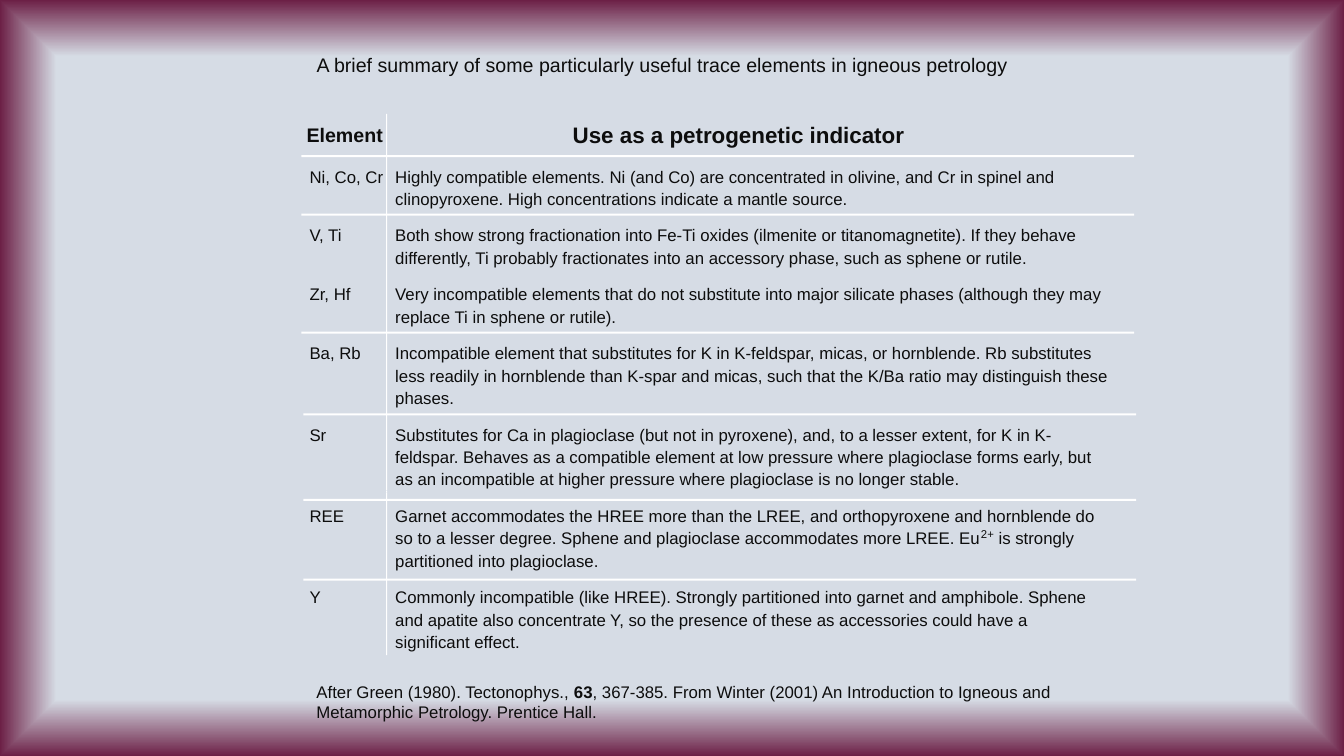
from pptx import Presentation
from pptx.dml.color import RGBColor
from pptx.enum.shapes import MSO_SHAPE
from pptx.enum.text import MSO_ANCHOR, PP_ALIGN
from pptx.oxml import parse_xml
from pptx.oxml.ns import nsdecls, qn
from pptx.util import Inches, Pt

# Content
COLORS = {"text": "0D0D0D", "rule": "FFFFFF", "center": "D6DCE5", "edge": "6C2046"}
FONT = "Arial"
TITLE = "A brief summary of some particularly useful trace elements in igneous petrology"
HEADER = [("Element", 14), ("Use as a petrogenetic indicator", 16)]
SUPER = "2+"
# element, lines of text, bottom edge of the row
ELEMENTS = [
    ("Ni, Co, Cr", [
        "Highly compatible elements. Ni (and Co) are concentrated in olivine, and Cr in spinel and",
        "clinopyroxene. High concentrations indicate a mantle source."], 2.13),
    ("V, Ti", [
        "Both show strong fractionation into Fe-Ti oxides (ilmenite or titanomagnetite). If they behave",
        "differently, Ti probably fractionates into an accessory phase, such as sphene or rutile."], 2.71),
    ("Zr, Hf", [
        "Very incompatible elements that do not substitute into major silicate phases (although they may",
        "replace Ti in sphene or rutile)."], 3.3),
    ("Ba, Rb", [
        "Incompatible element that substitutes for K in K-feldspar, micas, or hornblende. Rb substitutes",
        "less readily in hornblende than K-spar and micas, such that the K/Ba ratio may distinguish these",
        "phases."], 4.11),
    ("Sr", [
        "Substitutes for Ca in plagioclase (but not in pyroxene), and, to a lesser extent, for K in K-",
        "feldspar. Behaves as a compatible element at low pressure where plagioclase forms early, but",
        "as an incompatible at higher pressure where plagioclase is no longer stable."], 4.96),
    ("REE", [
        "Garnet accommodates the HREE more than the LREE, and orthopyroxene and hornblende do",
        "so to a lesser degree. Sphene and plagioclase accommodates more LREE. Eu2+ is strongly",
        "partitioned into plagioclase."], 5.75),
    ("Y", [
        "Commonly incompatible (like HREE). Strongly partitioned into garnet and amphibole. Sphene",
        "and apatite also concentrate Y, so the presence of these as accessories could have a",
        "significant effect."], 6.5),
]
SOURCE = [("After Green (1980). Tectonophys., ", False), ("63", True),
          (", 367-385. From Winter (2001) An Introduction to Igneous and "
           "Metamorphic Petrology. Prentice Hall.", False)]

# Grid, in inches
LEFT, TOP, HEADER_BOTTOM = 2.99, 1.13, 1.55
COLUMNS = [0.84, 7.42]
LINE = 16 / 72          # line pitch of the body text
ROW_GAP = 0.14          # extra space between two entries
FIRST_TEXT = 1.63       # top of the first body line
RULES = [(2.99, 1.54), (2.99, 2.12), (2.99, 3.29),
         (3.01, 4.1), (3.01, 4.95), (3.01, 5.74)]      # left, top
RULE_SIZE = (8.26, 0.02)
DIVIDER = (3.83, 0.01)  # left, width
DIVIDER_BODY = 1.52     # top of the divider's first body piece
JOINT = 0.02            # short piece between two divider pieces


def add_run(p, text, size, bold=False, raised=False):
    r = p.add_run()
    r.text = text
    r.font.name, r.font.size, r.font.bold = FONT, Pt(size), bold
    r.font.color.rgb = RGBColor.from_string(COLORS["text"])
    if raised:
        r.font._element.set("baseline", "30000")


def add_text(s, box, runs, size, margins=(0, 0), wrap=True):
    tf = s.shapes.add_textbox(*map(Inches, box)).text_frame
    tf.word_wrap = wrap
    tf.margin_left = tf.margin_right = Inches(margins[0])
    tf.margin_top = tf.margin_bottom = Inches(margins[1])
    for text, bold in runs:
        add_run(tf.paragraphs[0], text, size, bold)


def add_bar(s, *box):
    sp = s.shapes.add_shape(MSO_SHAPE.RECTANGLE, *map(Inches, box))
    sp.shadow.inherit = False
    sp.fill.solid()
    sp.fill.fore_color.rgb = RGBColor.from_string(COLORS["rule"])
    sp.line.fill.background()


def clear_cell(cell):
    """Remove the fill and all four borders."""
    cell.fill.background()
    tc_pr = cell._tc.get_or_add_tcPr()
    for i, side in enumerate("LRTB"):
        tc_pr.insert(i, parse_xml(f'<a:ln{side} {nsdecls("a")} w="0"><a:noFill/></a:ln{side}>'))


def set_margins(cell, left, top=0, right=0):
    cell.margin_left, cell.margin_top = Inches(left), Inches(top)
    cell.margin_right, cell.margin_bottom = Inches(right), 0


def add_background(s):
    fill = s.background.fill
    fill.gradient()
    for stop, name, position in zip(fill.gradient_stops, ("center", "edge"), (0.85, 1)):
        stop.color.rgb = RGBColor.from_string(COLORS[name])
        stop.position = position
    grad = next(s.element.iter(qn("a:gradFill")))
    edge = list(grad.iter(qn("a:srgbClr")))[1]
    edge.append(parse_xml(f'<a:alpha {nsdecls("a")} val="61000"/>'))
    grad.replace(grad.find(qn("a:lin")), parse_xml(
        f'<a:path {nsdecls("a")} path="shape">'
        '<a:fillToRect l="50000" t="50000" r="50000" b="50000"/></a:path>'))


def add_elements_table(s):
    edges = [TOP, HEADER_BOTTOM] + [row[2] for row in ELEMENTS]
    frame = s.shapes.add_table(len(edges) - 1, 2, Inches(LEFT), Inches(TOP),
                               Inches(sum(COLUMNS)), Inches(edges[-1] - TOP))
    table = frame.table
    table.first_row = table.horz_banding = False
    next(table._tbl.iter(qn("a:tableStyleId"))).text = "{2D5ABB26-0587-4C30-8999-92F81FD0307C}"
    for column, width in zip(table.columns, COLUMNS):
        column.width = Inches(width)
    for i, row in enumerate(table.rows):
        row.height = Inches(edges[i + 1] - edges[i])
        for cell in row.cells:
            clear_cell(cell)

    # Header row
    for j, (text, size) in enumerate(HEADER):
        cell = table.cell(0, j)
        set_margins(cell, (0.05, 0)[j], top=0.02, right=(0, 0.43)[j])
        cell.vertical_anchor = MSO_ANCHOR.MIDDLE
        p = cell.text_frame.paragraphs[0]
        p.alignment = (PP_ALIGN.LEFT, PP_ALIGN.CENTER)[j]
        add_run(p, text, size, bold=True)

    # Element rows
    text_top = FIRST_TEXT
    for i, (element, lines, _) in enumerate(ELEMENTS, 1):
        for j, cell_lines in enumerate(([element], lines)):
            cell = table.cell(i, j)
            set_margins(cell, (0.08, 0.09)[j], text_top - edges[i])
            p = cell.text_frame.paragraphs[0]
            p.line_spacing = Pt(16)
            for n, line in enumerate(cell_lines):
                if n:
                    p.add_line_break()
                before, mark, after = line.partition(SUPER)
                add_run(p, before, 12)
                if mark:
                    add_run(p, mark, 14, raised=True)
                    add_run(p, after, 12)
        text_top += len(lines) * LINE + ROW_GAP


def add_rules(s):
    # Horizontal rules
    for left, top in RULES:
        add_bar(s, left, top, *RULE_SIZE)
    # Column divider: one long piece and one joint per row
    left, width = DIVIDER
    heights = [DIVIDER_BODY - TOP] + [len(row[1]) * LINE + ROW_GAP for row in ELEMENTS]
    top = TOP
    for height in heights:
        add_bar(s, left, top, width, height - JOINT)
        add_bar(s, left, top + height - JOINT, width, JOINT)
        top += height


def main():
    prs = Presentation()
    prs.slide_width, prs.slide_height = Inches(13.33), Inches(7.5)
    s = prs.slides.add_slide(prs.slide_layouts[6])
    add_background(s)
    add_text(s, (3.14, 0.53, 6.93, 0.24), [(TITLE, False)], 14, wrap=False)
    add_elements_table(s)
    add_rules(s)
    add_text(s, (3.04, 6.71, 8.32, 0.51), SOURCE, 12, margins=(0.1, 0.05))
    prs.save("out.pptx")


if __name__ == "__main__":
    main()
